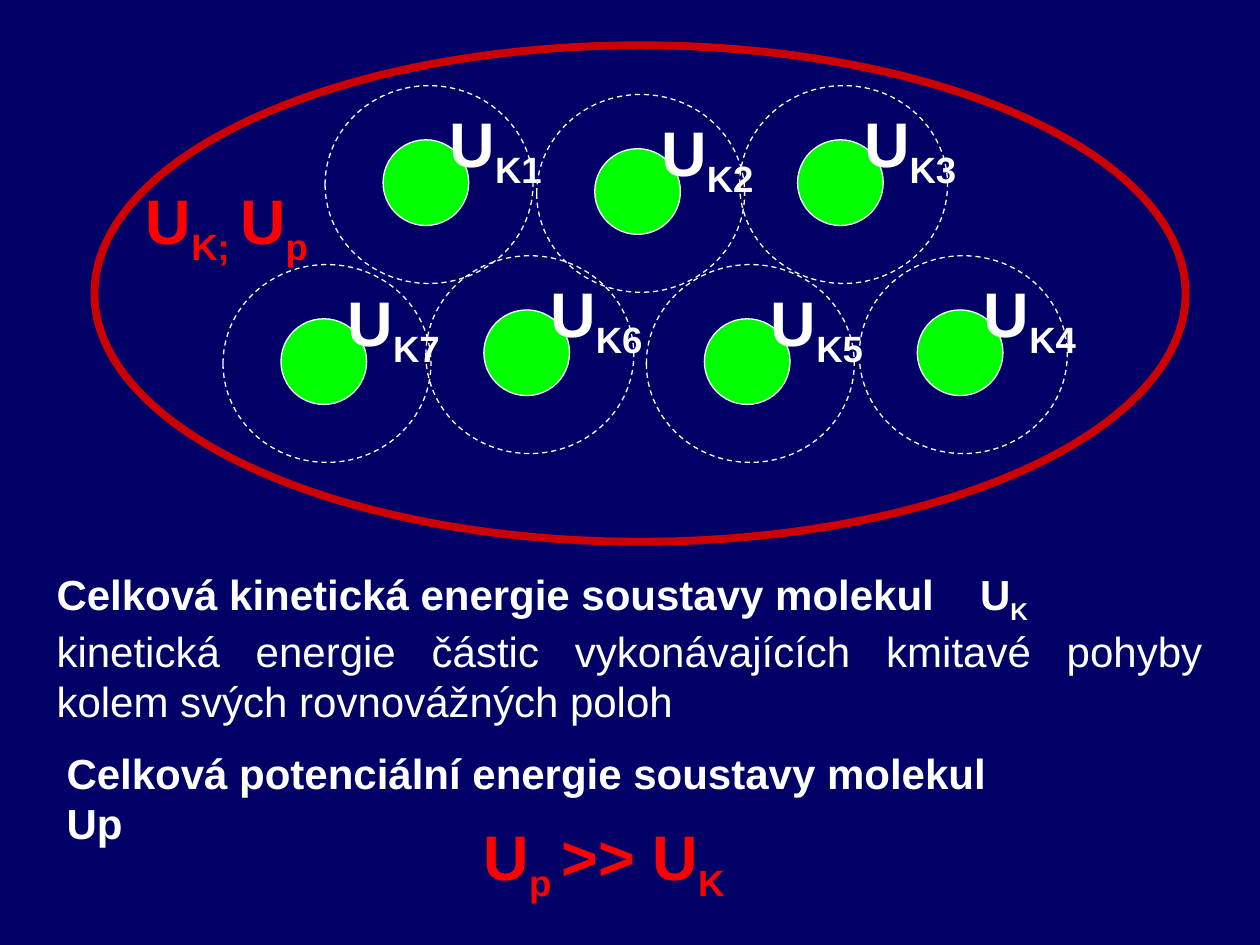
from pptx import Presentation
from pptx.dml.color import RGBColor
from pptx.enum.dml import MSO_LINE
from pptx.enum.shapes import MSO_SHAPE as SHAPE
from pptx.enum.text import MSO_AUTO_SIZE as AUTO_SIZE, PP_ALIGN as ALIGN
from pptx.oxml.ns import qn
from pptx.util import Inches, Pt
from lxml import etree

NAVY = RGBColor(0x00, 0x00, 0x66)
WHITE = RGBColor(0xFF, 0xFF, 0xFF)
GREEN = RGBColor(0x00, 0xFF, 0x00)
RED = RGBColor(0xFF, 0x00, 0x00)
DARK_RED = RGBColor(0xCC, 0x00, 0x00)

SYMBOL = {"name": "Arial", "size": Pt(36), "bold": True}
HEADING = {"name": "Arial", "size": Pt(24), "bold": True}
BODY = {"name": "Arial", "size": Pt(24), "bold": False}


def add_ellipse(parent, box, line_color, line_width, fill_color=None, dash=None):
    ellipse = parent.shapes.add_shape(SHAPE.OVAL, *[Inches(v) for v in box])
    ellipse.shadow.inherit = False
    if fill_color is None:
        ellipse.fill.background()
    else:
        ellipse.fill.solid()
        ellipse.fill.fore_color.rgb = fill_color
    ellipse.line.color.rgb = line_color
    ellipse.line.width = Pt(line_width)
    if dash is not None:
        ellipse.line.dash_style = dash


def add_text(parent, box, paragraphs, color, wrap=True):
    frame = parent.shapes.add_textbox(*[Inches(v) for v in box]).text_frame
    frame.word_wrap = wrap
    frame.auto_size = AUTO_SIZE.SHAPE_TO_FIT_TEXT
    for index, (style, parts) in enumerate(paragraphs):
        paragraph = frame.add_paragraph() if index else frame.paragraphs[0]
        for position, part in enumerate(parts):
            run = paragraph.add_run()
            run.text = part
            for attribute, value in style.items():
                setattr(run.font, attribute, value)
            run.font.color.rgb = color
            if position % 2:
                run._r.get_or_add_rPr().set("baseline", "-25000")
    return frame


prs = Presentation()
prs.slide_width, prs.slide_height = Inches(10), Inches(7.5)
slide = prs.slides.add_slide(prs.slide_layouts[6])
slide.background.fill.solid()
slide.background.fill.fore_color.rgb = NAVY

kinetic = add_text(slide, (0.35, 4.46, 9.29, 1.3), [
    (HEADING, ["Celková kinetická energie soustavy molekul\tU", "K"]),
    (BODY, ["kinetická energie částic vykonávajících kmitavé pohyby kolem svých rovnovážných poloh"]),
], WHITE)
tab_list = etree.SubElement(kinetic.paragraphs[0]._p.get_or_add_pPr(), qn("a:tabLst"))
etree.SubElement(tab_list, qn("a:tab"), pos=str(Inches(7.33)), algn="l")
kinetic.paragraphs[1].alignment = ALIGN.JUSTIFY

molecules = [
    ("K5", 5.13, 2.1), ("K1", 2.58, 0.68), ("K4", 6.82, 2.03), ("K3", 5.87, 0.68),
    ("K2", 4.26, 0.75), ("K7", 1.77, 2.1), ("K6", 3.38, 2.03),
]
for label, left, top in molecules:
    molecule = slide.shapes.add_group_shape()
    add_ellipse(molecule, (left, top, 1.65, 1.57), WHITE, 0.75, dash=MSO_LINE.DASH)
    add_ellipse(molecule, (left + 0.46, top + 0.43, 0.68, 0.68), WHITE, 0.75, GREEN)
    add_text(molecule, (left + 0.89, top + 0.1, 0.99, 0.7), [(SYMBOL, ["U", label])], WHITE)

system = slide.shapes.add_group_shape()
add_ellipse(system, (0.75, 0.36, 8.66, 3.94), DARK_RED, 4.5)
add_text(system, (1.06, 1.39, 2.2, 0.7), [(SYMBOL, ["U", "K; ", "U", "p"])], RED)

add_text(slide, (3.74, 6.44, 2.23, 0.7), [(SYMBOL, ["U", "p ", ">> U", "K"])], RED, wrap=False)
add_text(slide, (0.43, 5.88, 8.03, 0.5),
         [(HEADING, ["Celková potenciální energie soustavy molekul Up"])], WHITE, wrap=False)

prs.save("out.pptx")
